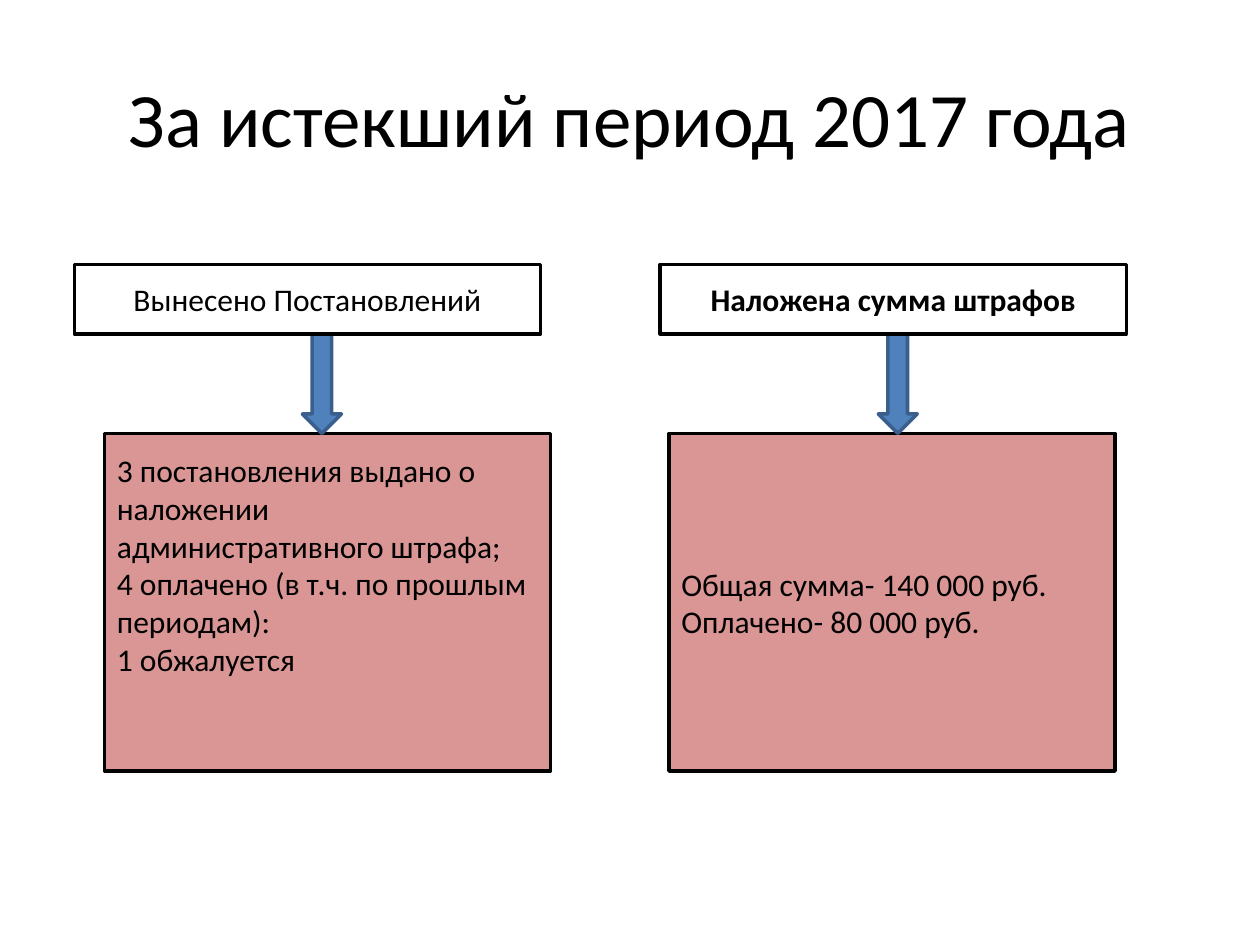
from pptx import Presentation
from pptx.dml.color import RGBColor as RGB
from pptx.enum.shapes import MSO_SHAPE as Shape
from pptx.enum.text import MSO_ANCHOR as Anchor, PP_ALIGN as Align
from pptx.util import Inches, Pt

COLORS = {
    "ink": "000000",
    "paper": "FFFFFF",
    "rose": "D99694",
    "blue": "4F81BD",
    "navy": "3A5F8C",
}
FONT = "Calibri"

COLUMNS = [
    {
        "head": "Вынесено Постановлений",
        "bold": False,
        "lines": [
            "3 постановления выдано о наложении административного штрафа;",
            "4 оплачено (в т.ч. по прошлым периодам):",
            "1 обжалуется",
        ],
        "head_x": 0.59,
        "body_x": 0.83,
        "arrow_x": 2.4,
        "foot": 0.65,
    },
    {
        "head": "Наложена сумма штрафов",
        "bold": True,
        "lines": ["Общая сумма- 140 000 руб.", "Оплачено- 80 000 руб."],
        "head_x": 5.24,
        "body_x": 5.31,
        "arrow_x": 6.97,
        "foot": 0.05,
    },
]


def color(name):
    return RGB.from_string(COLORS[name])


def write(frame, lines, size, align, bold=False):
    frame.word_wrap = True
    frame.vertical_anchor = Anchor.MIDDLE
    for i, line in enumerate(lines):
        para = frame.paragraphs[0] if i == 0 else frame.add_paragraph()
        para.text = line
        para.alignment = align
        font = para.font
        font.name = FONT
        font.size = Pt(size)
        font.bold = bold
        font.color.rgb = color("ink")


def add_shape(slide, kind, box, fill, line):
    shape = slide.shapes.add_shape(kind, *map(Inches, box))
    shape.shadow.inherit = False
    shape.fill.solid()
    shape.fill.fore_color.rgb = color(fill)
    shape.line.color.rgb = color(line)
    shape.line.width = Pt(2)
    return shape


def add_title(slide, text):
    box = slide.shapes.add_textbox(Inches(0.5), Inches(0.3), Inches(9), Inches(1.25))
    write(box.text_frame, [text], 44, Align.CENTER)


def add_column(slide, col):
    top, head_h, gap = 2.1, 0.55, 0.79
    mid = top + head_h
    body = add_shape(slide, Shape.RECTANGLE,
                     (col["body_x"], mid + gap, 3.54, 2.68), "rose", "ink")
    write(body.text_frame, col["lines"], 18, Align.LEFT)
    body.text_frame.margin_bottom = Inches(col["foot"])
    add_shape(slide, Shape.DOWN_ARROW, (col["arrow_x"], mid, 0.31, gap), "blue", "navy")
    head = add_shape(slide, Shape.RECTANGLE,
                     (col["head_x"], top, 3.7, head_h), "paper", "ink")
    write(head.text_frame, [col["head"]], 18, Align.CENTER, col["bold"])


def main():
    deck = Presentation()
    deck.slide_width, deck.slide_height = Inches(10), Inches(7.5)
    slide = deck.slides.add_slide(deck.slide_layouts[6])
    for col in COLUMNS:
        add_column(slide, col)
    add_title(slide, "За истекший период 2017 года")
    deck.save("out.pptx")


if __name__ == "__main__":
    main()
